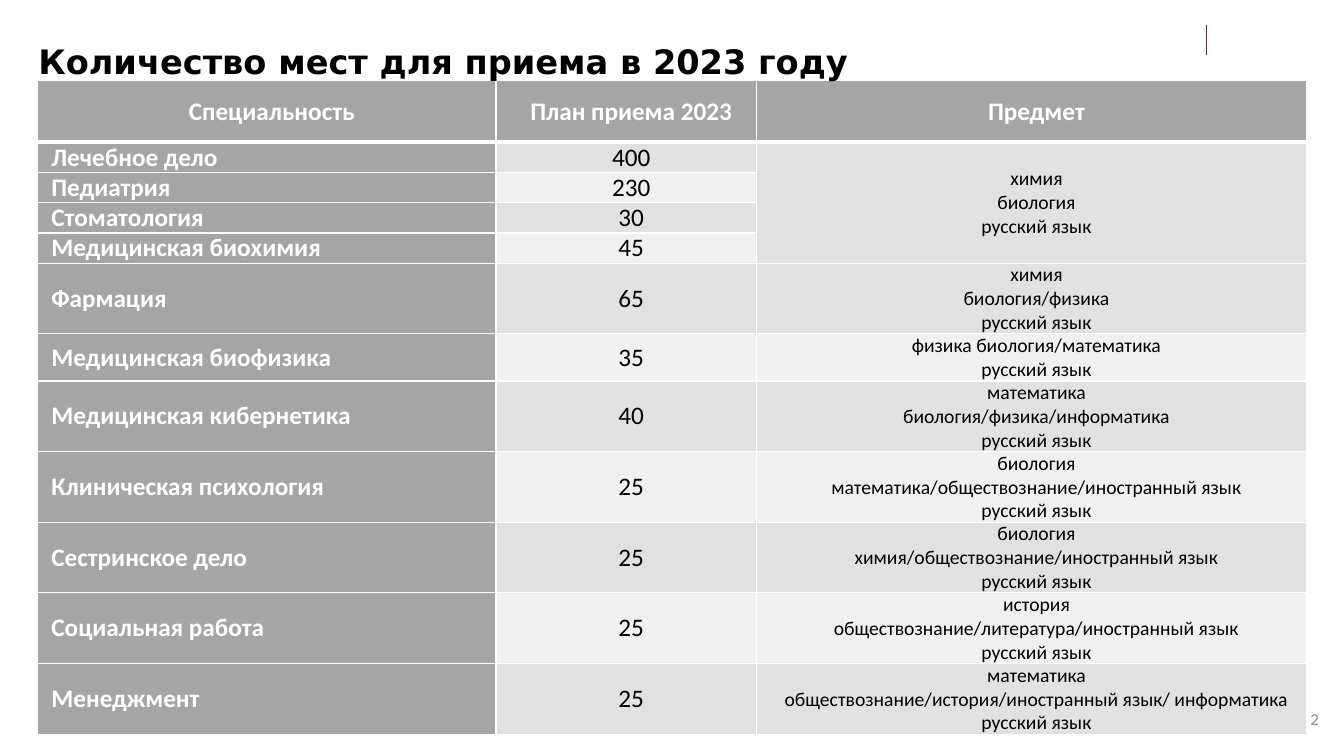
from lxml import etree
from pptx import Presentation
from pptx import util as u
from pptx.dml.color import RGBColor
from pptx.enum import shapes, text
from pptx.oxml import ns

WHITE, BLACK, GRAY = "FFFFFF", "000000", "A5A5A5"
BANDS = ("F0F0F0", "E1E1E1")
HEADINGS = ("Специальность", "План приема 2023", "Предмет")
SPECIALTIES = (
    ("Лечебное дело", 400, "химия\nбиология\nрусский язык"),
    ("Педиатрия", 230, ""),
    ("Стоматология", 30, ""),
    ("Медицинская биохимия", 45, ""),
    ("Фармация", 65, "химия\nбиология/физика\nрусский язык"),
    ("Медицинская биофизика", 35, "физика биология/математика\nрусский язык"),
    ("Медицинская кибернетика", 40,
     "математика\nбиология/физика/информатика\nрусский язык"),
    ("Клиническая психология", 25,
     "биология\nматематика/обществознание/иностранный язык\nрусский язык"),
    ("Сестринское дело", 25,
     "биология\nхимия/обществознание/иностранный язык\nрусский язык"),
    ("Социальная работа", 25,
     "история\nобществознание/литература/иностранный язык\nрусский язык"),
    ("Менеджмент", 25,
     "математика\nобществознание/история/иностранный язык/ информатика\nрусский язык"),
)
COLUMN_WIDTHS = (4.55, 2.58, 5.46)
ROW_HEIGHTS = (0.61, *[0.29] * 4, 0.67, 0.46, 0.67, 0.45, *[0.67] * 3)
SHARED_ROWS = 4


def color(value):
    return RGBColor.from_string(value)


def apply(target, values):
    for name, value in values.items():
        setattr(target, name, value)


def format_paragraph(paragraph, size, hex_color, bold=False, align="LEFT", font="Calibri"):
    paragraph.alignment = getattr(text.PP_ALIGN, align)
    apply(paragraph.font, {"name": font, "size": u.Pt(size), "bold": bold})
    paragraph.font.color.rgb = color(hex_color)


def place(shape, left, top, width, height):
    apply(shape, {"left": u.Inches(left), "top": u.Inches(top),
                  "width": u.Inches(width), "height": u.Inches(height)})


def set_borders(cell, widths):
    properties = cell._tc.get_or_add_tcPr()
    for side, width in widths.items():
        line = etree.SubElement(properties, ns.qn(f"a:ln{side}"), w=str(u.Pt(width)))
        fill = etree.SubElement(line, ns.qn("a:solidFill"))
        etree.SubElement(fill, ns.qn("a:srgbClr"), val=WHITE)


def fill_cell(cell, content, row, column):
    header, name = row == 0, column == 0
    subjects = column == 2 and not header
    set_borders(cell, {"L": 1, "R": 1, "T": 3 if row == 1 else 1, "B": 3 if header else 1})
    cell.fill.solid()
    cell.fill.fore_color.rgb = color(GRAY if header or name else BANDS[row % 2])
    top = subjects and row > SHARED_ROWS
    apply(cell, {"margin_left": u.Inches(0.04), "margin_right": u.Inches(0.04),
                 "margin_top": 0, "margin_bottom": 0,
                 "vertical_anchor": text.MSO_ANCHOR.TOP if top else text.MSO_ANCHOR.MIDDLE})
    if cell.is_spanned:
        return
    cell.text_frame.text = str(content)
    for paragraph in cell.text_frame.paragraphs:
        indent = paragraph._p.get_or_add_pPr()
        indent.set("marL", str(u.Inches(0.1)))
        indent.set("indent", "0")
        format_paragraph(paragraph, 14 if subjects else 18,
                         WHITE if header or name else BLACK, header or name,
                         "LEFT" if name and not header else "CENTER")


def add_admission_table(slide):
    rows = (HEADINGS, *SPECIALTIES)
    frame = slide.shapes.add_table(len(rows), len(HEADINGS), u.Inches(0.37), u.Inches(0.8),
                                   u.Inches(sum(COLUMN_WIDTHS)), u.Inches(sum(ROW_HEIGHTS)))
    table = frame.table
    for column, width in zip(table.columns, COLUMN_WIDTHS):
        column.width = u.Inches(width)
    for row, height in zip(table.rows, ROW_HEIGHTS):
        row.height = u.Inches(height)
    table.cell(1, 2).merge(table.cell(SHARED_ROWS, 2))
    for row, contents in enumerate(rows):
        for column, content in enumerate(contents):
            fill_cell(table.cell(row, column), content, row, column)


def add_accent_line(slide):
    line = slide.shapes.add_connector(shapes.MSO_CONNECTOR.STRAIGHT, u.Inches(11.97),
                                      u.Inches(0.25), u.Inches(11.97), u.Inches(0.55))
    line.line.color.rgb = color("7C222E")
    line.line.width = u.Pt(0.75)
    etree.SubElement(line.element.spPr, ns.qn("a:effectLst"))


def add_slide_number(slide):
    box = slide.shapes.add_textbox(u.Inches(12.37), u.Inches(6.93), u.Inches(0.81), u.Inches(0.4))
    frame = box.text_frame
    apply(frame, {"text": "2", "word_wrap": True, "vertical_anchor": text.MSO_ANCHOR.MIDDLE})
    format_paragraph(frame.paragraphs[0], 12, "8C8C8C", align="RIGHT")


def set_title(slide):
    title = slide.shapes.title
    place(title, 0.16, 0.36, 11.37, 0.55)
    frame = title.text_frame
    apply(frame, {"text": "Количество мест для приема в 2023 году", "word_wrap": True,
                  "auto_size": text.MSO_AUTO_SIZE.NONE, "margin_left": u.Inches(0.22),
                  "vertical_anchor": text.MSO_ANCHOR.MIDDLE})
    paragraph = frame.paragraphs[0]
    paragraph.line_spacing = 0.9
    format_paragraph(paragraph, 24, BLACK, True, font="DejaVu Sans")
    title.element.getparent().append(title.element)


def main():
    presentation = Presentation()
    apply(presentation, {"slide_width": u.Inches(13.33), "slide_height": u.Inches(7.5)})
    slide = presentation.slides.add_slide(presentation.slide_layouts[5])
    add_accent_line(slide)
    add_slide_number(slide)
    add_admission_table(slide)
    set_title(slide)
    presentation.save("out.pptx")


if __name__ == "__main__":
    main()
